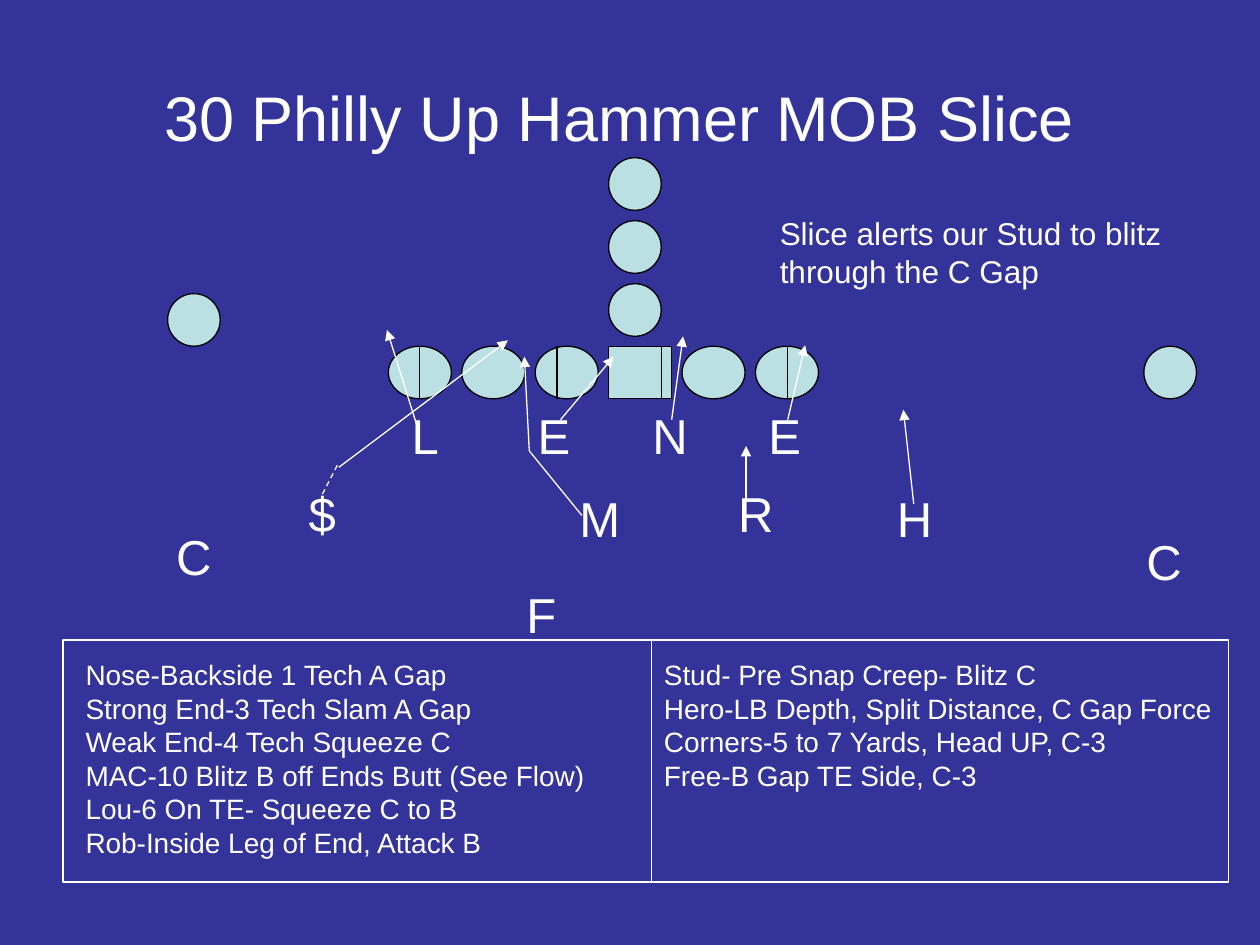
import pptx
import pptx.util
import pptx.dml.color
import pptx.enum.dml
import pptx.enum.shapes
import pptx.enum.text
import pptx.oxml.ns
import lxml.etree

Cm = pptx.util.Cm
Pt = pptx.util.Pt
SHAPES = pptx.enum.shapes.MSO_SHAPE

COLORS = {"field": "333399", "player": "BBE0E3", "ink": "000000", "chalk": "FFFFFF"}
FONT = "Arial"

TITLE = "30 Philly Up Hammer MOB Slice"
NOTE = "Slice alerts our Stud to blitz through the C Gap"
ASSIGNMENTS = [
    ["Nose-Backside 1 Tech A Gap", "Strong End-3 Tech Slam A Gap",
     "Weak End-4 Tech Squeeze C", "MAC-10 Blitz B off Ends Butt (See Flow)",
     "Lou-6 On TE- Squeeze C to B", "Rob-Inside Leg of End, Attack B"],
    ["Stud- Pre Snap Creep- Blitz C", "Hero-LB Depth, Split Distance, C Gap Force",
     "Corners-5 to 7 Yards, Head UP, C-3", "Free-B Gap TE Side, C-3"],
]
ASSIGNMENT_BOXES = [(1.47, 13.13, 11.63, 4.32), (13.13, 13.13, 11.63, 2.97)]

DEFENDERS = [
    ("E", 10.59, 8.05, 1.27), ("N", 12.9, 8.05, 1.27), ("E", 15.24, 8.05, 1.27),
    ("L", 8.05, 8.05, 1.07), ("M", 11.43, 9.73, 1.47), ("R", 14.63, 9.63, 1.47),
    ("C", 3.3, 10.49, 1.47), ("$", 5.97, 9.63, 1.07), ("H", 17.83, 9.73, 1.27),
    ("C", 22.86, 10.59, 1.07), ("F", 10.36, 11.66, 1.07),
]
DEFENDER_HEIGHT = 1.45

LINE_LEFT, LINE_TOP, LINE_STEP, LINEMAN_WIDTH = 7.83, 6.98, 1.48, 1.27
LINEMEN, SNAPPER = 6, 3
PLAYER_SIZE = 1.06
BACK_LEFT, BACK_TOP, BACK_STEP, BACKS = 12.27, 3.18, 1.27, 3
RECEIVERS = [(3.38, 5.92), (23.06, 6.98)]
SEAMS = [8.46, 11.23, 13.34, 15.88]

ROUTES = [
    [(13.54, 8.46), (13.77, 6.78)],
    [(8.43, 8.66), (7.8, 6.65)],
    [(6.83, 9.42), (10.24, 6.86)],
    [(11.3, 8.46), (12.37, 7.19)],
    [(15.88, 8.46), (16.23, 6.96)],
    [(15.04, 10.06), (15.04, 8.99)],
    [(18.42, 10.16), (18.21, 8.26)],
    [(11.73, 10.39), (10.67, 9.09), (10.57, 7.19)],
]
CREEP = [(6.5, 9.96), (6.83, 9.32)]
FRAME = (1.27, 12.9, 23.5, 4.88)
DIVIDER = 13.13


def color(name):
    return pptx.dml.color.RGBColor.from_string(COLORS[name])


def style_line(line, name):
    line.color.rgb = color(name)
    line.width = Pt(0.75)


def place(shape, box):
    shape.left, shape.top, shape.width, shape.height = map(Cm, box)


def write(shape, lines, size):
    frame = shape.text_frame
    frame.word_wrap = True
    frame.auto_size = pptx.enum.text.MSO_AUTO_SIZE.NONE
    frame.text = "\n".join(lines)
    for paragraph in frame.paragraphs:
        paragraph.font.name = FONT
        paragraph.font.size = Pt(size)
        paragraph.font.color.rgb = color("chalk")
        paragraph.space_before = Pt(0)


def add_text(slide, text, box, size):
    write(slide.shapes.add_textbox(*map(Cm, box)), [text], size)


def add_outline(slide, kind, box, line, fill=None):
    shape = slide.shapes.add_shape(kind, *map(Cm, box))
    shape.shadow.inherit = False
    if fill:
        shape.fill.solid()
        shape.fill.fore_color.rgb = color(fill)
    else:
        shape.fill.background()
    style_line(shape.line, line)


def add_line(slide, start, end, name, arrow=False, dashed=False):
    connector = slide.shapes.add_connector(
        pptx.enum.shapes.MSO_CONNECTOR.STRAIGHT, *map(Cm, start + end))
    style_line(connector.line, name)
    if dashed:
        connector.line.dash_style = pptx.enum.dml.MSO_LINE.DASH
    qn = pptx.oxml.ns.qn
    properties = connector._element.spPr
    if arrow:
        lxml.etree.SubElement(properties.find(qn("a:ln")), qn("a:tailEnd"), type="triangle")
    lxml.etree.SubElement(properties, qn("a:effectLst"))


def add_assignments(slide):
    bodies = list(slide.placeholders)[1:3]
    for body, lines, box in zip(bodies, ASSIGNMENTS, ASSIGNMENT_BOXES):
        place(body, box)
        write(body, lines, 16)
        for paragraph in body.text_frame.paragraphs:
            properties = paragraph._p.get_or_add_pPr()
            properties.set("marL", "0")
            properties.set("indent", "0")
            lxml.etree.SubElement(properties, pptx.oxml.ns.qn("a:buNone"))
            default_font = properties.find(pptx.oxml.ns.qn("a:defRPr"))
            properties.append(default_font)
    left, top, width, height = FRAME
    add_outline(slide, SHAPES.RECTANGLE, FRAME, "chalk")
    add_line(slide, (DIVIDER, top + height), (DIVIDER, top), "chalk")


def add_offense(slide):
    for index in range(LINEMEN):
        kind = SHAPES.RECTANGLE if index == SNAPPER else SHAPES.OVAL
        box = (LINE_LEFT + index * LINE_STEP, LINE_TOP, LINEMAN_WIDTH, PLAYER_SIZE)
        add_outline(slide, kind, box, "ink", "player")
    backs = [(BACK_LEFT, BACK_TOP + index * BACK_STEP) for index in range(BACKS)]
    for left, top in RECEIVERS + backs:
        add_outline(slide, SHAPES.OVAL, (left, top, PLAYER_SIZE, PLAYER_SIZE), "ink", "player")
    for seam in SEAMS:
        add_line(slide, (seam, LINE_TOP), (seam, LINE_TOP + PLAYER_SIZE), "ink")


def add_defense(slide):
    for letter, left, top, width in DEFENDERS:
        add_text(slide, letter, (left, top, width, DEFENDER_HEIGHT), 28)
    for route in ROUTES:
        for start, end in zip(route, route[1:]):
            add_line(slide, start, end, "chalk", arrow=end == route[-1])
    add_line(slide, *CREEP, "chalk", dashed=True)


def main():
    presentation = pptx.Presentation()
    presentation.slide_width, presentation.slide_height = Cm(25.4), Cm(19.05)
    slide = presentation.slides.add_slide(presentation.slide_layouts[3])
    slide.background.fill.solid()
    slide.background.fill.fore_color.rgb = color("field")
    title = slide.shapes.title
    place(title, (0.84, 0.76, 23.29, 3.18))
    write(title, [TITLE], 36)
    title.text_frame.vertical_anchor = pptx.enum.text.MSO_ANCHOR.MIDDLE
    title.text_frame.paragraphs[0].alignment = pptx.enum.text.PP_ALIGN.CENTER
    add_offense(slide)
    add_defense(slide)
    add_assignments(slide)
    add_text(slide, NOTE, (15.47, 4.19, 8.74, 1.78), 18)
    presentation.save("out.pptx")


if __name__ == "__main__":
    main()
